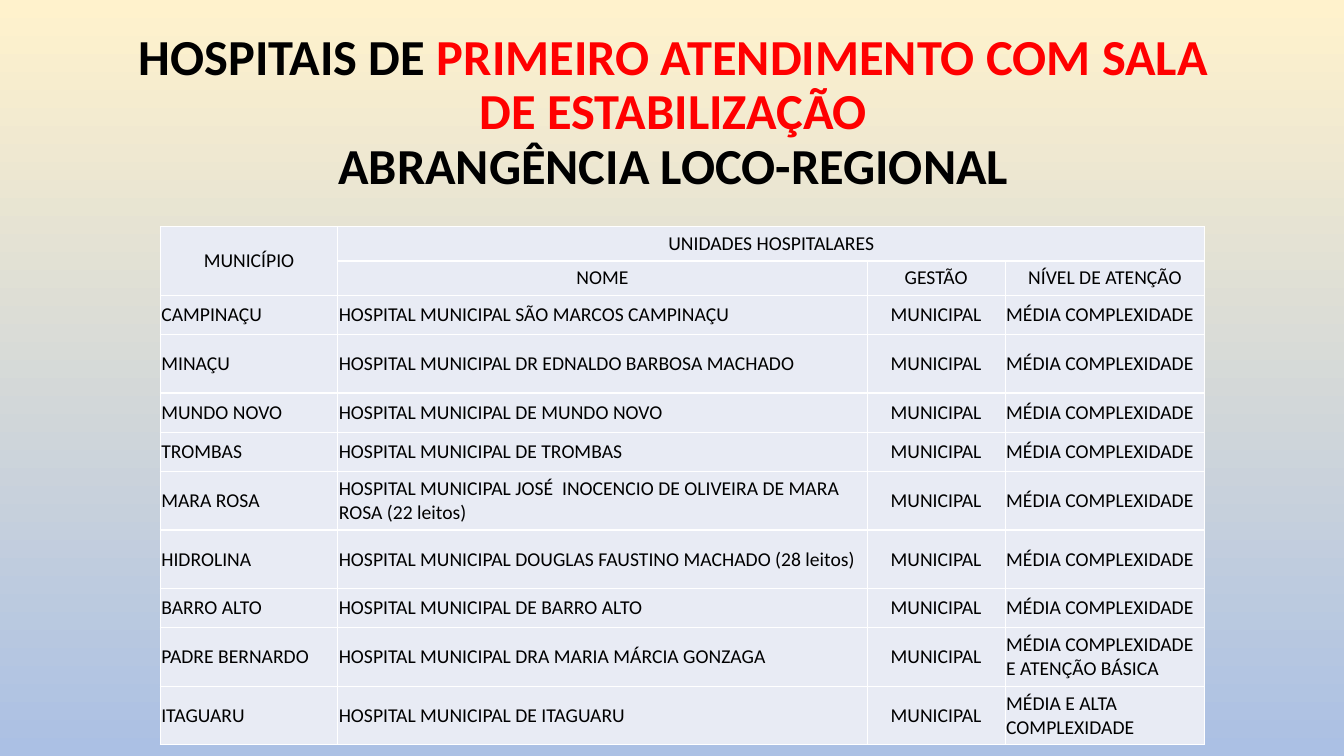
import pptx
import pptx.util
import pptx.dml.color
import pptx.enum.text
import pptx.oxml
import pptx.oxml.ns

Inches = pptx.util.Inches
Pt = pptx.util.Pt
PP_ALIGN = pptx.enum.text.PP_ALIGN
MIDDLE = pptx.enum.text.MSO_ANCHOR.MIDDLE


def rgb(value):
    return pptx.dml.color.RGBColor.from_string(value)


def style_cell(cell, align):
    cell.fill.solid()
    cell.fill.fore_color.rgb = rgb("E8EBF4")
    cell.vertical_anchor = MIDDLE
    cell.margin_left = cell.margin_right = Inches(0.01)
    cell.margin_top = cell.margin_bottom = Inches(0.05)
    p = cell.text_frame.paragraphs[0]
    p.alignment = align
    p.font.name = "Calibri"
    p.font.size = Pt(14)
    p.font.color.rgb = rgb("000000")
    # Borders come before the fill in the cell properties
    tc_pr = cell._tc.get_or_add_tcPr()
    for i, side in enumerate(("lnL", "lnR", "lnT", "lnB")):
        tc_pr.insert(i, pptx.oxml.parse_xml(
            f'<a:{side} {pptx.oxml.ns.nsdecls("a")} w="{Pt(0.96)}"><a:solidFill>'
            f'<a:srgbClr val="FFFFFF"/></a:solidFill></a:{side}>'))


prs = pptx.Presentation()
prs.slide_width = Inches(13.33)
prs.slide_height = Inches(7.5)
s = prs.slides.add_slide(prs.slide_layouts[5])

# Background gradient, top to bottom
fill = s.background.fill
fill.gradient()
fill.gradient_angle = 270
for stop, color in zip(fill.gradient_stops, ("FFF2CC", "ABC0E4")):
    stop.color.rgb = rgb(color)

# Title
title = s.shapes.title
title.left, title.top = Inches(1.05), Inches(0.4)
title.width, title.height = Inches(11.26), Inches(1.45)
tf = title.text_frame
tf.word_wrap = True
tf.auto_size = pptx.enum.text.MSO_AUTO_SIZE.NONE
tf.vertical_anchor = MIDDLE
p = tf.paragraphs[0]
p.alignment = PP_ALIGN.CENTER
p.line_spacing = 0.9
p.font.name = "Calibri"
p.font.size = Pt(36)
p.font.bold = True
for text, color in (("HOSPITAIS DE ", "000000"),
                    ("PRIMEIRO ATENDIMENTO COM SALA DE ESTABILIZAÇÃO", "FF0000"),
                    (None, None),
                    ("ABRANGÊNCIA LOCO-REGIONAL", "000000")):
    if text is None:
        p.add_line_break()
        continue
    r = p.add_run()
    r.text = text
    r.font.color.rgb = rgb(color)

# Hospital table: two header rows, then one row per municipality
media = "MÉDIA COMPLEXIDADE"
hospitals = [
    ("CAMPINAÇU", "SÃO MARCOS CAMPINAÇU", media, 0.39),
    ("MINAÇU", "DR EDNALDO BARBOSA MACHADO", media, 0.58),
    ("MUNDO NOVO", "DE MUNDO NOVO", media, 0.39),
    ("TROMBAS", "DE TROMBAS", media, 0.39),
    ("MARA ROSA", "JOSÉ  INOCENCIO DE OLIVEIRA DE MARA ROSA (22 leitos)", media, 0.58),
    ("HIDROLINA", "DOUGLAS FAUSTINO MACHADO (28 leitos)", media, 0.58),
    ("BARRO ALTO", "DE BARRO ALTO", media, 0.39),
    ("PADRE BERNARDO", "DRA MARIA MÁRCIA GONZAGA", media + " E ATENÇÃO BÁSICA", 0.58),
    ("ITAGUARU", "DE ITAGUARU", "MÉDIA E ALTA COMPLEXIDADE", 0.58),
]
rows = [("MUNICÍPIO", "UNIDADES HOSPITALARES", "", ""),
        ("", "NOME", "GESTÃO", "NÍVEL DE ATENÇÃO")]
rows += [(city, "HOSPITAL MUNICIPAL " + name, "MUNICIPAL", level)
         for city, name, level, height in hospitals]
heights = [0.34, 0.34] + [h[-1] for h in hospitals]
widths = [1.76, 5.25, 1.37, 1.98]

table = s.shapes.add_table(len(rows), len(widths), Inches(1.59), Inches(2.25),
                           Inches(sum(widths)), Inches(sum(heights))).table
for column, width in zip(table.columns, widths):
    column.width = Inches(width)
for row, height in zip(table.rows, heights):
    row.height = Inches(height)
for i, texts in enumerate(rows):
    for j, text in enumerate(texts):
        cell = table.cell(i, j)
        cell.text = text
        # Header rows and the management column are centred
        style_cell(cell, PP_ALIGN.CENTER if i < 2 or j == 2 else PP_ALIGN.LEFT)
        for r in cell.text_frame.paragraphs[0].runs:
            r.font.bold = False
table.cell(0, 0).merge(table.cell(1, 0))
table.cell(0, 1).merge(table.cell(0, 3))

prs.save("out.pptx")
